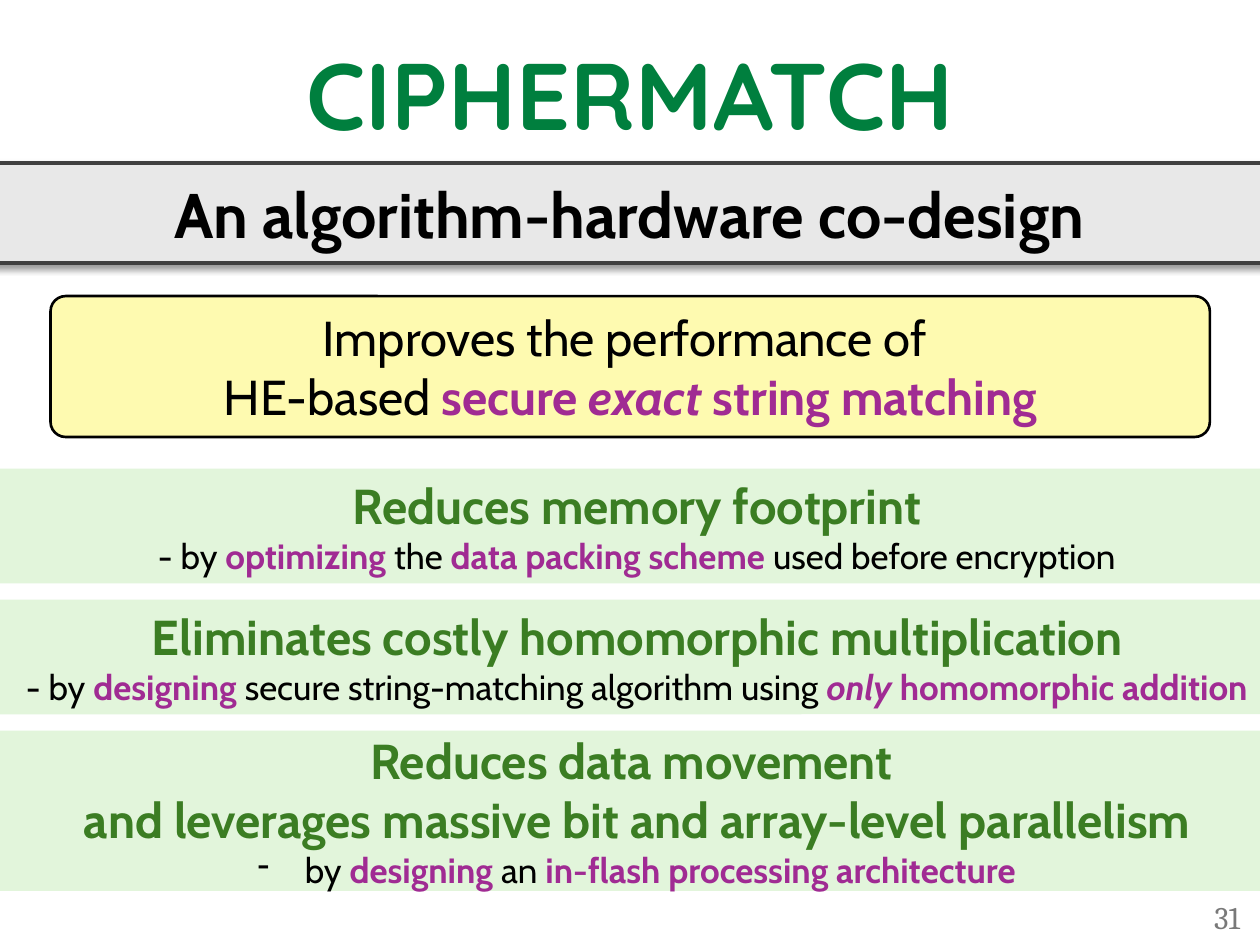
"""Build the CIPHERMATCH summary slide."""
from lxml import etree
from pptx import Presentation
from pptx import util as u
from pptx.dml.color import RGBColor
from pptx.enum import shapes, text
from pptx.oxml import ns

BLACK = RGBColor(0x00, 0x00, 0x00)
TITLE_GREEN = RGBColor(0x00, 0x7F, 0x3E)
HEADING_GREEN = RGBColor(0x3B, 0x7D, 0x23)
PURPLE = RGBColor(0xA0, 0x2B, 0x93)
NUMBER_GRAY = RGBColor(0x79, 0x79, 0x79)
BANNER_FILL = RGBColor(0xE8, 0xE8, 0xE8)
BANNER_LINE = RGBColor(0x40, 0x40, 0x40)
YELLOW = RGBColor(0xFC, 0xF1, 0x01)
PALE_GREEN = RGBColor(0xD9, 0xF2, 0xD0)

STYLES = {
    "title": ("Quicksand", 54, TITLE_GREEN, True, False),
    "banner": ("Cabin", 36, BLACK, True, False),
    "goal": ("Cabin", 28, BLACK, False, False),
    "goal key": ("Cabin", 28, PURPLE, True, False),
    "goal stress": ("Cabin", 28, PURPLE, True, True),
    "heading": ("Cabin", 28, HEADING_GREEN, True, False),
    "detail": ("Cabin", 20, BLACK, False, False),
    "key": ("Cabin", 20, PURPLE, True, False),
    "stress": ("Cabin", 20, PURPLE, True, True),
    "number": ("Cambria", 18, NUMBER_GRAY, False, False),
}

TITLE = [[("CIPHERMATCH", "title")]]
BANNER = [[("An algorithm-hardware co-design", "banner")]]
GOAL = [
    [("Improves the performance of ", "goal")],
    [("HE-based ", "goal"), ("secure ", "goal key"),
     ("exact", "goal stress"), (" string matching", "goal key")],
]
BENEFITS = [
    (2.31, [
        [("Reduces memory footprint", "heading")],
        [("- by ", "detail"), ("optimizing", "key"), (" the ", "detail"),
         ("data packing scheme", "key"), (" used before encryption", "detail")],
    ]),
    (2.31, [
        [("Eliminates costly homomorphic multiplication", "heading")],
        [("- by ", "detail"), ("designing", "key"),
         (" secure string-matching algorithm using ", "detail"),
         ("only", "stress"), (" homomorphic addition", "key")],
    ]),
    (3.23, [
        [("Reduces data movement ", "heading")],
        [("and leverages massive bit and array-level parallelism", "heading")],
        [("by ", "detail"), ("designing", "key"), (" an ", "detail"),
         ("in-flash processing architecture", "key")],
    ]),
]
PAGE_NUMBER = [[("31", "number")]]
BENEFIT_TOP, BENEFIT_GAP = 9.45, 0.33
CORNER = 0.107


def write(shape, paragraphs, align=text.PP_ALIGN.CENTER):
    frame = shape.text_frame
    frame.word_wrap = True
    frame.vertical_anchor = text.MSO_ANCHOR.MIDDLE
    for index, runs in enumerate(paragraphs):
        paragraph = frame.paragraphs[0] if index == 0 else frame.add_paragraph()
        paragraph.alignment = align
        for words, style in runs:
            run = paragraph.add_run()
            run.text = words
            font = run.font
            font.name, size, font.color.rgb, font.bold, font.italic = STYLES[style]
            font.size = u.Pt(size)
    return frame


def add_text(slide, box, paragraphs, align=text.PP_ALIGN.CENTER):
    return write(slide.shapes.add_textbox(*map(u.Cm, box)), paragraphs, align)


def add_box(slide, kind, box, paragraphs, fill, opacity=100, line=None, width=0):
    shape = slide.shapes.add_shape(kind, *map(u.Cm, box))
    shape.shadow.inherit = False
    shape.fill.solid()
    shape.fill.fore_color.rgb = fill
    if opacity < 100:
        color = shape.element.xpath("./p:spPr/a:solidFill/a:srgbClr")[0]
        etree.SubElement(color, ns.qn("a:alpha"), val=str(opacity * 1000))
    if line is None:
        shape.line.fill.background()
    else:
        shape.line.color.rgb = line
        shape.line.width = u.Pt(width)
    if kind == shapes.MSO_SHAPE.ROUNDED_RECTANGLE:
        shape.adjustments[0] = CORNER
    write(shape, paragraphs)
    return shape


def add_shadow(shape):
    effects = shape.element.xpath("./p:spPr/a:effectLst")[0]
    shadow = etree.SubElement(
        effects, ns.qn("a:outerShdw"), blurRad=str(u.Pt(4)), dist=str(u.Pt(3)),
        dir=str(45 * 60000), algn="tl", rotWithShape="0")
    color = etree.SubElement(shadow, ns.qn("a:srgbClr"), val=str(BLACK))
    etree.SubElement(color, ns.qn("a:alpha"), val="40000")


def add_dash(paragraph):
    properties = paragraph._p.get_or_add_pPr()
    properties.set("marL", str(u.Cm(0.95)))
    properties.set("indent", str(u.Cm(-0.95)))
    etree.SubElement(properties, ns.qn("a:buChar"), char="-")


def main():
    presentation = Presentation()
    presentation.slide_width, presentation.slide_height = u.Cm(25.4), u.Cm(19.05)
    slide = presentation.slides.add_slide(presentation.slide_layouts[6])
    rounded = shapes.MSO_SHAPE.ROUNDED_RECTANGLE

    title = add_text(slide, (1.75, 0.18, 21.9, 3.68), TITLE)
    title.paragraphs[0].line_spacing = 0.9
    banner = add_box(slide, shapes.MSO_SHAPE.RECTANGLE, (-0.76, 3.28, 26.9, 2.03),
                     BANNER, BANNER_FILL, line=BANNER_LINE, width=2.25)
    add_shadow(banner)
    add_box(slide, rounded, (1.02, 5.97, 23.37, 2.84), GOAL, YELLOW, 31, BLACK, 1.5)

    top = BENEFIT_TOP
    for height, paragraphs in BENEFITS:
        benefit = add_box(slide, rounded, (-0.61, top, 26.9, height),
                          paragraphs, PALE_GREEN, 75)
        top += height + BENEFIT_GAP
    add_dash(benefit.text_frame.paragraphs[-1])

    add_text(slide, (19.53, 17.98, 5.72, 1.02), PAGE_NUMBER, text.PP_ALIGN.RIGHT)
    presentation.save("out.pptx")


if __name__ == "__main__":
    main()
